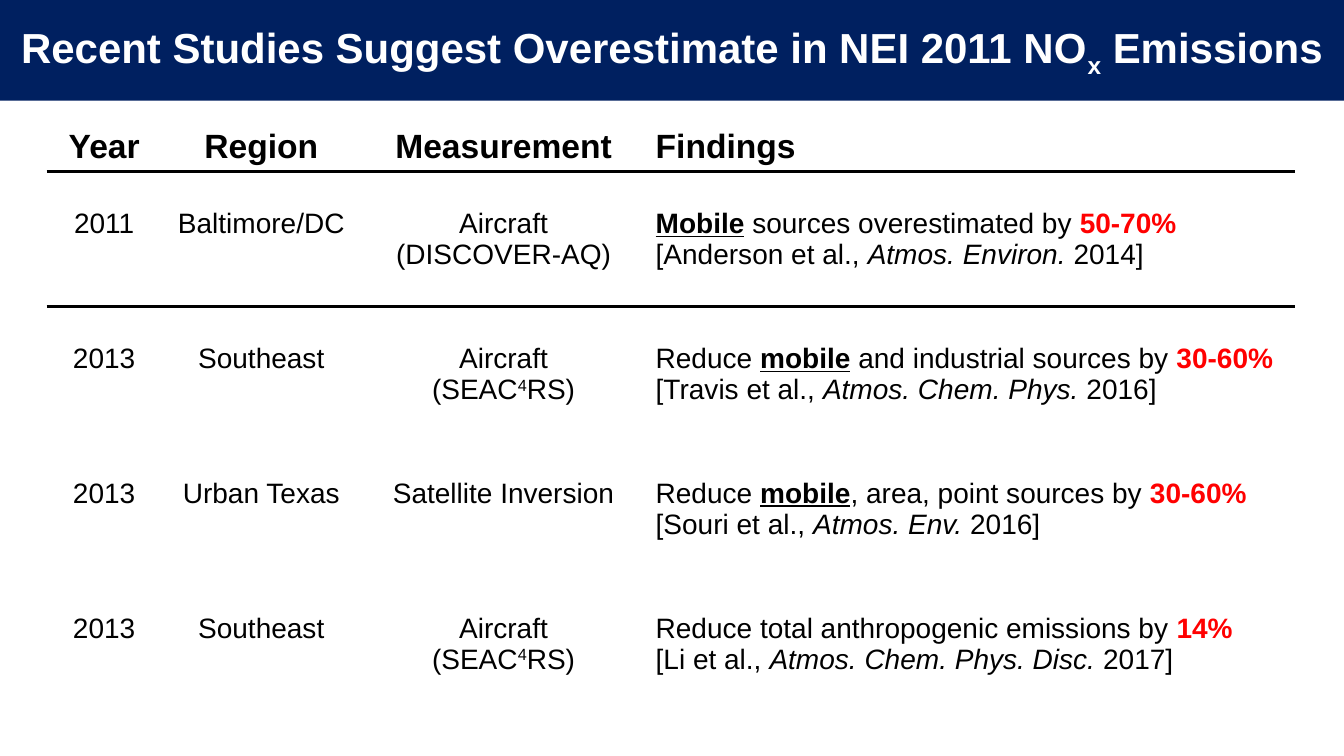
"""Build a slide that tabulates recent studies of NOx emission estimates."""
from lxml.etree import SubElement
from pptx import Presentation
from pptx.dml.color import RGBColor
from pptx.enum.shapes import MSO_SHAPE
from pptx.enum.text import MSO_ANCHOR, PP_ALIGN
from pptx.oxml import parse_xml
from pptx.oxml.ns import nsdecls, qn
from pptx.util import Cm, Pt

NAVY = RGBColor(0x00, 0x20, 0x60)
WHITE = RGBColor(0xFF, 0xFF, 0xFF)
BLACK = RGBColor(0x00, 0x00, 0x00)
RED = RGBColor(0xFF, 0x00, 0x00)

TITLE = [[("Recent Studies Suggest Overestimate in NEI 2011 NO", "b"), ("x", "b_"), (" Emissions", "b")]]
HEADINGS = ["Year", "Region", "Measurement", "Findings"]
COLUMN_WIDTHS = [2.87, 5.05, 7.16, 16.36]
SEAC4RS = [[("Aircraft", "")], [("(SEAC", ""), ("4", "^"), ("RS)", "")]]
STUDIES = [
    ("2011", "Baltimore/DC", [[("Aircraft", "")], [("(DISCOVER-AQ)", "")]], [
        [("Mobile", "bu"), (" sources overestimated by ", ""), ("50-70%", "br")],
        [("[Anderson et al., ", ""), ("Atmos. Environ.", "i"), (" 2014]", "")]]),
    ("2013", "Southeast", SEAC4RS, [
        [("Reduce ", ""), ("mobile", "bu"), (" and industrial sources by ", ""), ("30-60%", "br"),
         (" [Travis et al., ", ""), ("Atmos. Chem. Phys.", "i"), (" 2016]", "")]]),
    ("2013", "Urban Texas", [[("Satellite Inversion", "")]], [
        [("Reduce ", ""), ("mobile", "bu"), (", area, point sources by ", ""), ("30-60%", "br")],
        [("[Souri et al., ", ""), ("Atmos. Env.", "i"), (" 2016]", "")]]),
    ("2013", "Southeast", SEAC4RS, [
        [("Reduce total anthropogenic emissions by ", ""), ("14%", "br")],
        [("[Li et al., ", ""), ("Atmos. Chem. Phys. Disc.", "i"), (" 2017]", "")]]),
]


class StudySlide:
    """Hold the style and the page, and draw each kind of element."""

    font = "Arial"
    baselines = {"_": "-25000", "^": "30000"}

    def __init__(self, page):
        """Keep the page to draw on."""
        self.page = page

    def add_text(self, frame, lines, size, color, align):
        """Fill a text frame with paragraphs of flagged runs."""
        for index, line in enumerate(lines):
            para = frame.add_paragraph() if index else frame.paragraphs[0]
            para.alignment = align
            for text, flags in line:
                span = para.add_run()
                span.text = text
                span.font.name = self.font
                span.font.size = Pt(size)
                span.font.bold = "b" in flags
                span.font.italic = "i" in flags
                span.font.underline = "u" in flags
                span.font.color.rgb = RED if "r" in flags else color
                for mark in self.baselines.keys() & set(flags):
                    span._r.get_or_add_rPr().set("baseline", self.baselines[mark])

    def banner(self, lines, width, height):
        """Draw the title bar across the top."""
        box = self.page.shapes.add_shape(MSO_SHAPE.RECTANGLE, 0, 0, width, height)
        box.shadow.inherit = False
        box.fill.solid()
        box.fill.fore_color.rgb = NAVY
        box.line.fill.background()
        box.text_frame.word_wrap = True
        box.text_frame.vertical_anchor = MSO_ANCHOR.MIDDLE
        self.add_text(box.text_frame, lines, 30, WHITE, PP_ALIGN.CENTER)

    def rule(self, cell, side):
        """Draw a black rule along one side of a cell."""
        border = parse_xml(f'<a:{side} {nsdecls("a")} w="{Pt(3)}"/>')
        fill = SubElement(border, qn("a:solidFill"))
        SubElement(fill, qn("a:srgbClr"), val=str(BLACK))
        cell._tc.get_or_add_tcPr().insert(0, border)

    def table(self, left, top, widths, rows):
        """Draw the table with a ruled heading row."""
        heights = [Cm(1.22)] + [Cm(3.4)] * (len(rows) - 1)
        table = self.page.shapes.add_table(
            len(rows), len(widths), left, top, Cm(sum(widths)), sum(heights)).table
        table.horz_banding = False
        for column, width in zip(table.columns, widths):
            column.width = Cm(width)
        for row_index, (row, height) in enumerate(zip(rows, heights)):
            table.rows[row_index].height = height
            for column_index, lines in enumerate(row):
                cell = table.cell(row_index, column_index)
                if row_index < 2:
                    self.rule(cell, "lnT" if row_index else "lnB")
                cell.fill.background()
                cell.margin_top = Cm(0.92 if row_index else 0.13)
                last = column_index == len(widths) - 1
                self.add_text(cell.text_frame, lines, 20 if row_index else 24, BLACK,
                              PP_ALIGN.LEFT if last else PP_ALIGN.CENTER)


def main():
    """Build and save the deck."""
    deck = Presentation()
    deck.slide_width, deck.slide_height = Cm(33.87), Cm(19.05)
    slide = StudySlide(deck.slides.add_slide(deck.slide_layouts[6]))
    slide.banner(TITLE, deck.slide_width, Cm(2.54))
    rows = [[[[(heading, "b")]] for heading in HEADINGS]]
    for year, region, measurement, findings in STUDIES:
        rows.append([[[(year, "")]], [[(region, "")]], measurement, findings])
    slide.table(Cm(1.19), Cm(3.1), COLUMN_WIDTHS, rows)
    deck.save("out.pptx")


if __name__ == "__main__":
    main()
